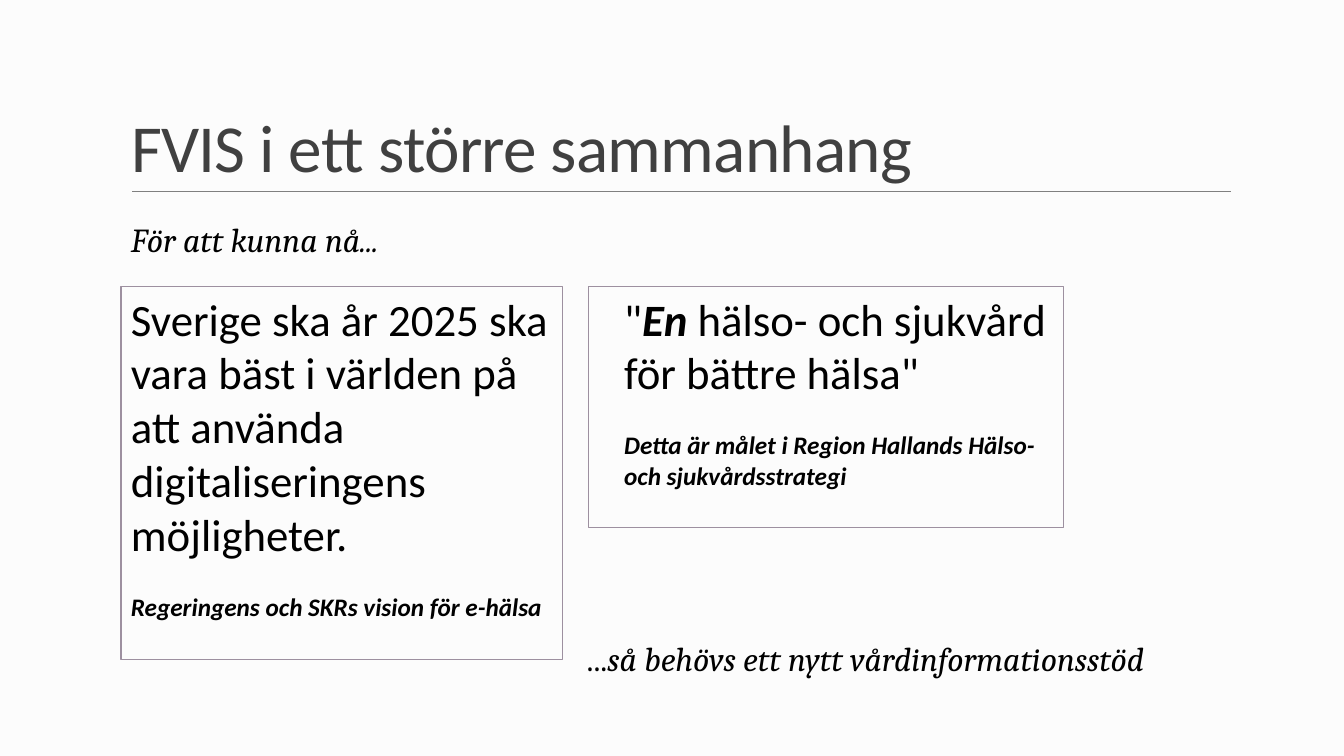
"""Build the slide about FVIS in a wider context."""
from lxml import etree
from pptx import Presentation
from pptx.dml.color import RGBColor
from pptx.enum.shapes import MSO_CONNECTOR, MSO_SHAPE
from pptx.enum.text import MSO_ANCHOR, PP_ALIGN
from pptx.oxml.ns import qn
from pptx.util import Inches, Pt

STRAIGHT = MSO_CONNECTOR.STRAIGHT
RECTANGLE = MSO_SHAPE.RECTANGLE
TOP, BOTTOM = MSO_ANCHOR.TOP, MSO_ANCHOR.BOTTOM
LEFT = PP_ALIGN.LEFT


def color(value):
    return RGBColor.from_string(value)


def add_runs(paragraph, runs, font_name, size):
    paragraph.alignment = LEFT
    for text, bold, italic in runs:
        run = paragraph.add_run()
        run.text = text
        run.font.name = font_name
        run.font.size = Pt(size)
        run.font.bold = bold
        run.font.italic = italic
        run.font.color.rgb = color("000000")


presentation = Presentation()
presentation.slide_width = Inches(13.33)
presentation.slide_height = Inches(7.5)
slide = presentation.slides.add_slide(presentation.slide_layouts[5])
slide.background.fill.solid()
slide.background.fill.fore_color.rgb = color("FCFCFC")

rule = slide.shapes.add_connector(STRAIGHT, Inches(1.31), Inches(1.9), Inches(12.21), Inches(1.9))
rule.line.color.rgb = color("808080")
rule.line.width = Pt(0.5)
etree.SubElement(rule._element.spPr, qn("a:effectLst"))

title = slide.shapes.title
title.left, title.top = Inches(1.2), Inches(0.31)
title.width, title.height = Inches(11), Inches(1.59)
title.text_frame.text = "FVIS i ett större sammanhang"
title.text_frame.vertical_anchor = BOTTOM
paragraph = title.text_frame.paragraphs[0]
paragraph.alignment = LEFT
paragraph.line_spacing = 0.85
run = paragraph.runs[0]
run.font.name = "Calibri"
run.font.size = Pt(48)
run.font.color.rgb = color("404040")
run._r.get_or_add_rPr().set("spc", "-50")

goals = [
    (1.2, 4.38, 3.7, 0.1,
     [("Sverige ska år 2025 ska vara bäst i världen på att använda digitaliseringens möjligheter.",
       False, False)],
     "Regeringens och SKRs vision för e-hälsa"),
    (5.84, 4.71, 2.39, 0.35,
     [('"', False, False), ("En", True, True),
      (' hälso- och sjukvård för bättre hälsa"', False, False)],
     "Detta är målet i Region Hallands Hälso- och sjukvårdsstrategi"),
]
for left, width, height, margin, goal, source in goals:
    box = slide.shapes.add_shape(
        RECTANGLE, Inches(left), Inches(2.84), Inches(width), Inches(height))
    box.shadow.inherit = False
    box.fill.background()
    box.line.color.rgb = color("9D90A0")
    box.line.width = Pt(0.75)
    frame = box.text_frame
    frame.word_wrap = True
    frame.vertical_anchor = TOP
    frame.margin_left = Inches(margin)
    add_runs(frame.paragraphs[0], goal, "Calibri", 32)
    source_paragraph = frame.add_paragraph()
    source_paragraph.space_before = Pt(22)
    add_runs(source_paragraph, [(source, True, True)], "Calibri", 18)

remarks = [
    (1.2, 2.12, [("För att kunna nå...", False, True)]),
    (5.72, 6.28, [("...", False, False),
                  ("så behövs ett nytt vårdinformationsstöd", False, True)]),
]
for left, top, runs in remarks:
    remark = slide.shapes.add_textbox(Inches(left), Inches(top), Inches(6.66), Inches(0.5))
    remark.text_frame.word_wrap = True
    add_runs(remark.text_frame.paragraphs[0], runs, "Cambria", 24)

presentation.save("out.pptx")
